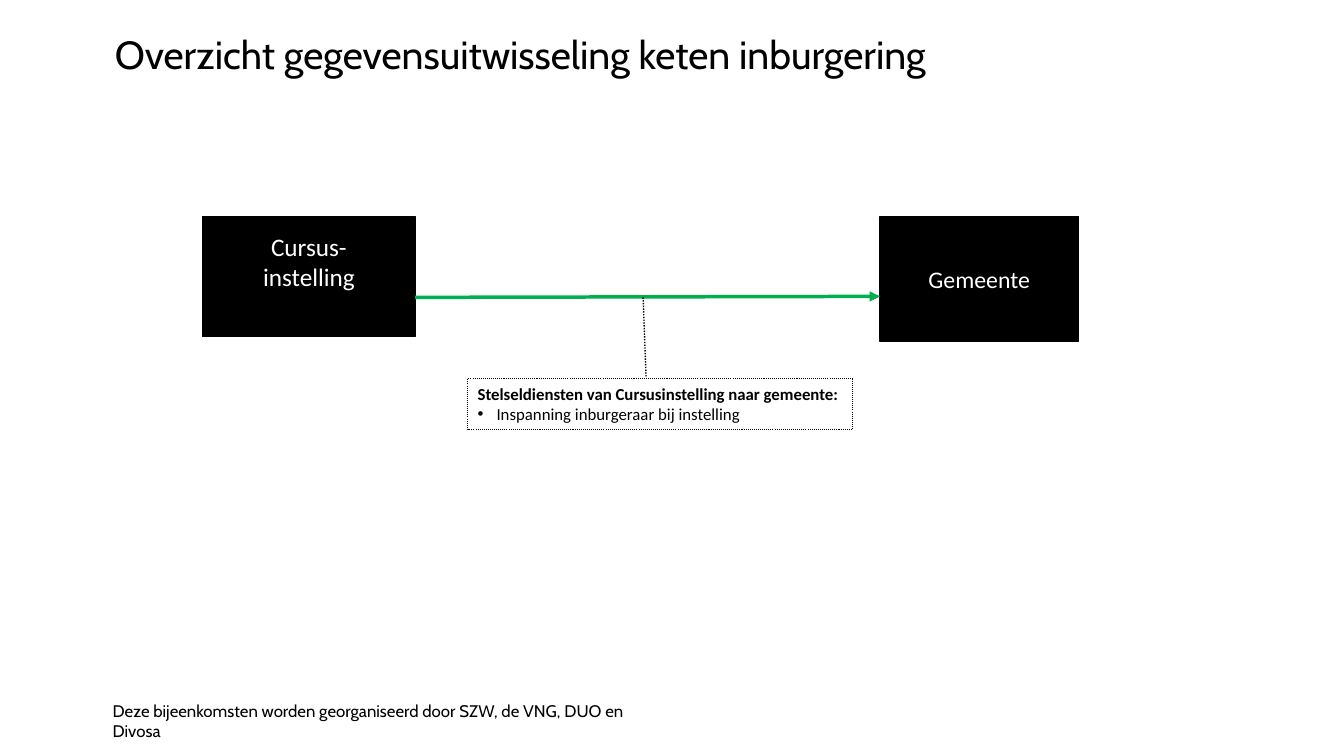
from dataclasses import dataclass
from typing import Optional

from lxml.etree import SubElement
from pptx import Presentation
from pptx.dml.color import RGBColor
from pptx.enum.dml import MSO_LINE_DASH_STYLE as Dash
from pptx.enum.shapes import MSO_CONNECTOR as Connector, MSO_SHAPE as Shape
from pptx.enum.text import MSO_ANCHOR as Anchor, PP_ALIGN as Align
from pptx.oxml.ns import qn
from pptx.util import Pt

COLORS = {"black": "000000", "white": "FFFFFF", "green": "00B050"}


@dataclass
class Line:
    text: str
    bold: bool = False
    bullet: bool = False


@dataclass
class Block:
    left: float
    top: float
    width: float
    height: float
    lines: list[Line]
    size: float
    font: str = "Calibri"
    color: str = "black"
    align: Align = Align.LEFT
    anchor: Anchor = Anchor.TOP
    wrap: bool = True
    spacing: float = 1.0
    bottom_inset: float = 3.6
    fill: Optional[str] = None
    outline: Optional[float] = None
    dash: Optional[Dash] = None


@dataclass
class Link:
    start: tuple[float, float]
    end: tuple[float, float]
    color: str
    width: float
    dash: Optional[Dash] = None
    arrow: bool = False


def actor(left: float, width: float, height: float, size: float,
          words: list[str], bottom_inset: float = 3.6) -> Block:
    return Block(left, 154.8, width, height, [Line(word) for word in words], size,
                 color="white", align=Align.CENTER, anchor=Anchor.MIDDLE,
                 bottom_inset=bottom_inset, fill="black", outline=1)


BLOCKS = [
    Block(73.4, 496.8, 393.1, 21.6,
          [Line("Deze bijeenkomsten worden georganiseerd door SZW, de VNG, DUO en Divosa")],
          12, font="Cabin"),
    Block(74.9, 12.2, 860.4, 56.9,
          [Line("Overzicht gegevensuitwisseling keten inburgering")],
          28, font="Cabin", anchor=Anchor.MIDDLE, spacing=0.9),
    actor(144.7, 151.9, 85.7, 18, ["Cursus-", "instelling"], bottom_inset=25.6),
    actor(628.6, 141.8, 89.3, 17, ["Gemeente"]),
    Block(334.1, 270.7, 275, 36,
          [Line("Stelseldiensten van Cursusinstelling naar gemeente:", bold=True),
           Line("Inspanning inburgeraar bij instelling", bullet=True)],
          12, wrap=False, outline=0.75, dash=Dash.ROUND_DOT),
]

LINKS = [
    Link((296.6, 212.4), (628.6, 211.7), "green", 2.5, arrow=True),
    Link((459.4, 212.4), (461.5, 269.3), "black", 1, dash=Dash.ROUND_DOT),
]


def rgb(name: str) -> RGBColor:
    return RGBColor.from_string(COLORS[name])


def add_block(page, block: Block) -> None:
    bounds = [Pt(v) for v in (block.left, block.top, block.width, block.height)]
    if block.outline:
        box = page.shapes.add_shape(Shape.RECTANGLE, *bounds)
        box.shadow.inherit = False
        box.line.color.rgb = rgb("black")
        box.line.width = Pt(block.outline)
        if block.dash:
            box.line.dash_style = block.dash
        if block.fill:
            box.fill.solid()
            box.fill.fore_color.rgb = rgb(block.fill)
        else:
            box.fill.background()
    else:
        box = page.shapes.add_textbox(*bounds)
    frame = box.text_frame
    frame.word_wrap = block.wrap
    frame.vertical_anchor = block.anchor
    frame.margin_bottom = Pt(block.bottom_inset)
    for index, line in enumerate(block.lines):
        para = frame.add_paragraph() if index else frame.paragraphs[0]
        para.text = line.text
        para.alignment = block.align
        para.line_spacing = block.spacing
        if line.bullet:
            properties = para._p.get_or_add_pPr()
            properties.set("marL", str(Pt(13.5)))
            properties.set("indent", str(Pt(-13.5)))
            SubElement(properties, qn("a:buFont"), typeface="Arial")
            SubElement(properties, qn("a:buChar"), char="•")
        para.font.name = block.font
        para.font.size = Pt(block.size)
        para.font.bold = line.bold
        para.font.color.rgb = rgb(block.color)


def add_link(page, link: Link) -> None:
    points = [Pt(v) for v in (*link.start, *link.end)]
    connector = page.shapes.add_connector(Connector.STRAIGHT, *points)
    connector.line.color.rgb = rgb(link.color)
    connector.line.width = Pt(link.width)
    if link.dash:
        connector.line.dash_style = link.dash
    if link.arrow:
        SubElement(connector.line._get_or_add_ln(), qn("a:tailEnd"), type="triangle")
    SubElement(connector._element.spPr, qn("a:effectLst"))


def main() -> None:
    deck = Presentation()
    deck.slide_width, deck.slide_height = Pt(960), Pt(540)
    page = deck.slides.add_slide(deck.slide_layouts[6])
    for block in BLOCKS:
        add_block(page, block)
    for link in LINKS:
        add_link(page, link)
    deck.save("out.pptx")


if __name__ == "__main__":
    main()
